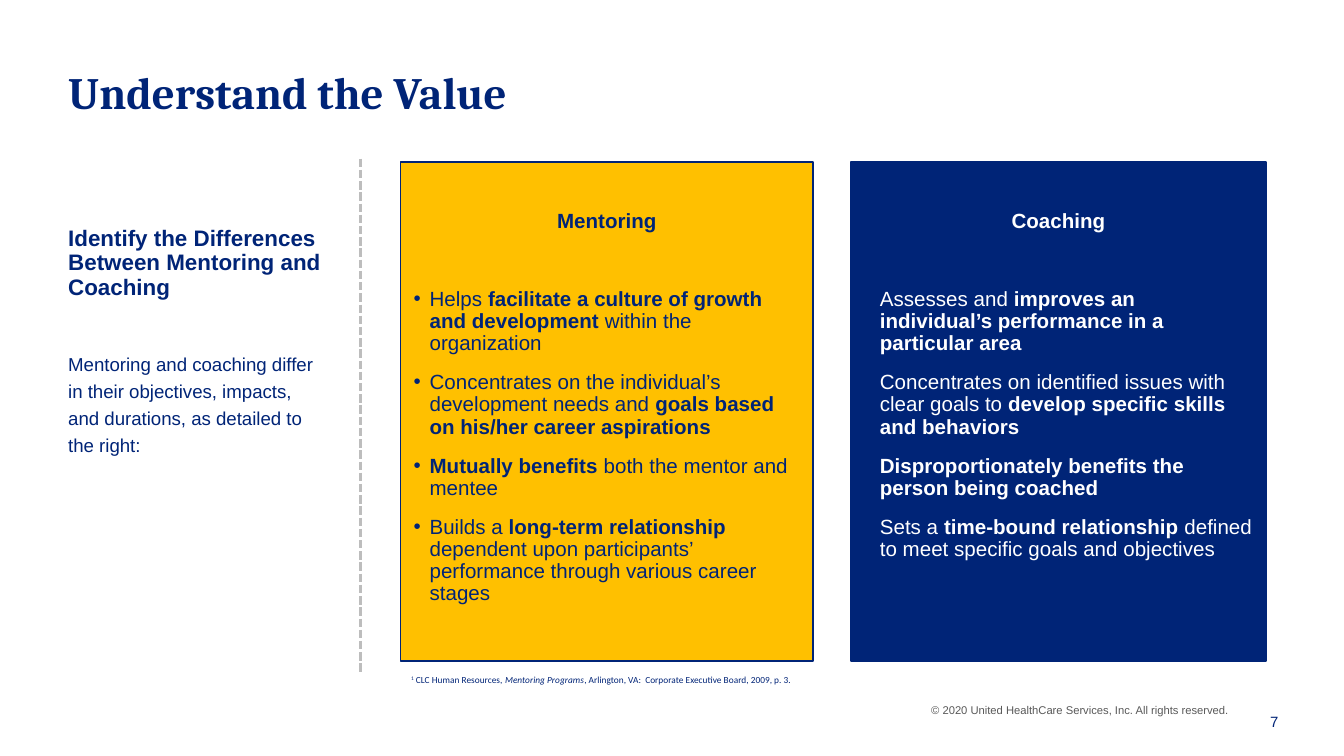
"""Build a slide that sets mentoring beside coaching."""
from dataclasses import dataclass

from lxml import etree
from pptx import Presentation
from pptx.dml.color import RGBColor
from pptx.enum.dml import MSO_LINE
from pptx.enum.shapes import MSO_CONNECTOR, MSO_SHAPE
from pptx.enum.text import MSO_ANCHOR, PP_ALIGN
from pptx.oxml.ns import qn
from pptx.util import Cm, Pt

LEFT, MID, RIGHT = PP_ALIGN.LEFT, PP_ALIGN.CENTER, PP_ALIGN.RIGHT
TOP, MIDDLE = MSO_ANCHOR.TOP, MSO_ANCHOR.MIDDLE
RECT, LINE, DASH = MSO_SHAPE.RECTANGLE, MSO_CONNECTOR.STRAIGHT, MSO_LINE.SQUARE_DOT
COLORS = {"navy": "002477", "gold": "FFC000", "white": "FFFFFF",
          "gray": "595959", "rule": "BDBDBD"}


@dataclass
class Style:
    size: float
    color: str = "navy"
    face: str = "Arial"
    bold: bool = False
    align: PP_ALIGN = LEFT
    lines: float = 1.0
    before: float = 0
    after: float = 0
    indent: float = 0
    bullet: bool = False


@dataclass
class Box:
    left: float
    top: float
    width: float
    height: float
    inset: float = 0.13
    anchor: MSO_ANCHOR = TOP


@dataclass
class Panel:
    box: Box
    fill: str
    ink: str
    bullet: bool
    head: str
    points: list[str]


PANELS = [
    Panel(Box(7.57, 3.07, 7.8, 9.42, 0.91), "gold", "navy", True, "Mentoring", [
        "Helps *facilitate a culture of growth and development* within the organization",
        "Concentrates on the individual’s development needs and "
        "*goals based on his/her career aspirations*",
        "*Mutually benefits *both the mentor and mentee",
        "Builds a* long-term relationship* dependent upon participants’ "
        "performance through various career stages",
    ]),
    Panel(Box(16.08, 3.07, 7.85, 9.42, 0.91), "navy", "white", False, "Coaching", [
        "Assesses and *improves an individual’s performance in a particular area*",
        "Concentrates on identified issues with clear goals to "
        "*develop specific skills and behaviors*",
        "*Disproportionately benefits the person being coached*",
        "Sets a* time-bound relationship* defined to meet specific goals and objectives",
    ]),
]


def tint(name: str) -> RGBColor:
    return RGBColor.from_string(COLORS[name])


def add_mark(para, style: Style) -> None:
    props = para._p.get_or_add_pPr()
    props.set("marL", str(Cm(style.indent)))
    props.set("indent", str(-Cm(style.indent) if style.bullet else 0))
    if style.bullet:
        color = etree.SubElement(props, qn("a:buClr"))
        etree.SubElement(color, qn("a:srgbClr")).set("val", COLORS[style.color])
        etree.SubElement(props, qn("a:buFont")).set("typeface", "Arial")
        etree.SubElement(props, qn("a:buChar")).set("char", "•")
    else:
        etree.SubElement(props, qn("a:buNone"))


def write(para, text: str, style: Style) -> None:
    add_mark(para, style)
    para.alignment = style.align
    para.line_spacing = style.lines
    para.space_before, para.space_after = Pt(style.before), Pt(style.after)
    font = para.font
    font.size, font.name, font.bold = Pt(style.size), style.face, style.bold
    font.color.rgb = tint(style.color)
    for index, part in enumerate(text.split("*")):
        if part:
            run = para.add_run()
            run.text = part
            if index % 2:
                run.font.bold = True


def fill_text(shape, box: Box, items: list[tuple[str, Style]]) -> None:
    frame = shape.text_frame
    frame.word_wrap = True
    frame.vertical_anchor = box.anchor
    frame.margin_top, frame.margin_bottom = Cm(box.inset), Cm(min(box.inset, 0.13))
    for index, (text, style) in enumerate(items):
        para = frame.add_paragraph() if index else frame.paragraphs[0]
        write(para, text, style)


def place(box: Box) -> list[Cm]:
    return [Cm(side) for side in (box.left, box.top, box.width, box.height)]


def add_text(slide, box: Box, *items: tuple[str, Style]):
    shape = slide.shapes.add_textbox(*place(box))
    fill_text(shape, box, list(items))
    return shape


def add_panel(slide, panel: Panel) -> None:
    shape = slide.shapes.add_shape(RECT, *place(panel.box))
    shape.shadow.inherit = False
    shape.fill.solid()
    shape.fill.fore_color.rgb = tint(panel.fill)
    shape.line.color.rgb = tint("navy")
    shape.line.width = Pt(1)
    head = Style(11, panel.ink, bold=True, align=MID, lines=0.9, after=27)
    point = Style(11, panel.ink, lines=0.9, before=3, after=6,
                  indent=0.3, bullet=panel.bullet)
    fill_text(shape, panel.box,
              [(panel.head, head)] + [(text, point) for text in panel.points])


def add_rule(slide, left: float, top: float, end: float) -> None:
    rule = slide.shapes.add_connector(LINE, Cm(left), Cm(top), Cm(left), Cm(end))
    rule.line.color.rgb = tint("rule")
    rule.line.width = Pt(1.5)
    rule.line.dash_style = DASH
    etree.SubElement(rule._element.spPr, qn("a:effectLst"))


def add_note(slide) -> None:
    note = add_text(slide, Box(7.52, 12.75, 16.64, 0.2, 0),
                    ("1", Style(5, face="Calibri")))
    para = note.text_frame.paragraphs[0]
    para.runs[0]._r.get_or_add_rPr().set("baseline", "30000")
    for text, slant in ((" CLC Human Resources, ", False), ("Mentoring Programs", True),
                        (", Arlington, VA:  Corporate Executive Board, 2009, p. 3.", False)):
        run = para.add_run()
        run.text = text
        run.font.italic = slant


def main() -> None:
    deck = Presentation()
    deck.slide_width, deck.slide_height = Cm(25.4), Cm(14.29)
    slide = deck.slides.add_slide(deck.slide_layouts[6])
    add_text(slide, Box(17.35, 13.16, 6.55, 0.51),
             ("© 2020 United HealthCare Services, Inc. All rights reserved.",
              Style(6, "gray")))
    add_text(slide, Box(1.04, 0.97, 23.11, 1.52, anchor=MIDDLE),
             ("Understand the Value", Style(24, face="Cambria", bold=True)))
    add_text(slide, Box(23.42, 13.23, 0.99, 0.81, anchor=MIDDLE),
             ("7", Style(8, align=RIGHT)))
    add_text(slide, Box(1.04, 3.33, 5.38, 9.42, 0.97),
             ("Identify the Differences Between Mentoring and Coaching",
              Style(12, bold=True, lines=0.9, after=25)),
             ("Mentoring and coaching differ in their objectives, impacts, "
              "and durations, as detailed to the right:",
              Style(10, lines=1.2, before=1, after=1)))
    add_rule(slide, 6.81, 3, 12.75)
    for panel in PANELS:
        add_panel(slide, panel)
    add_note(slide)
    deck.save("out.pptx")


if __name__ == "__main__":
    main()
